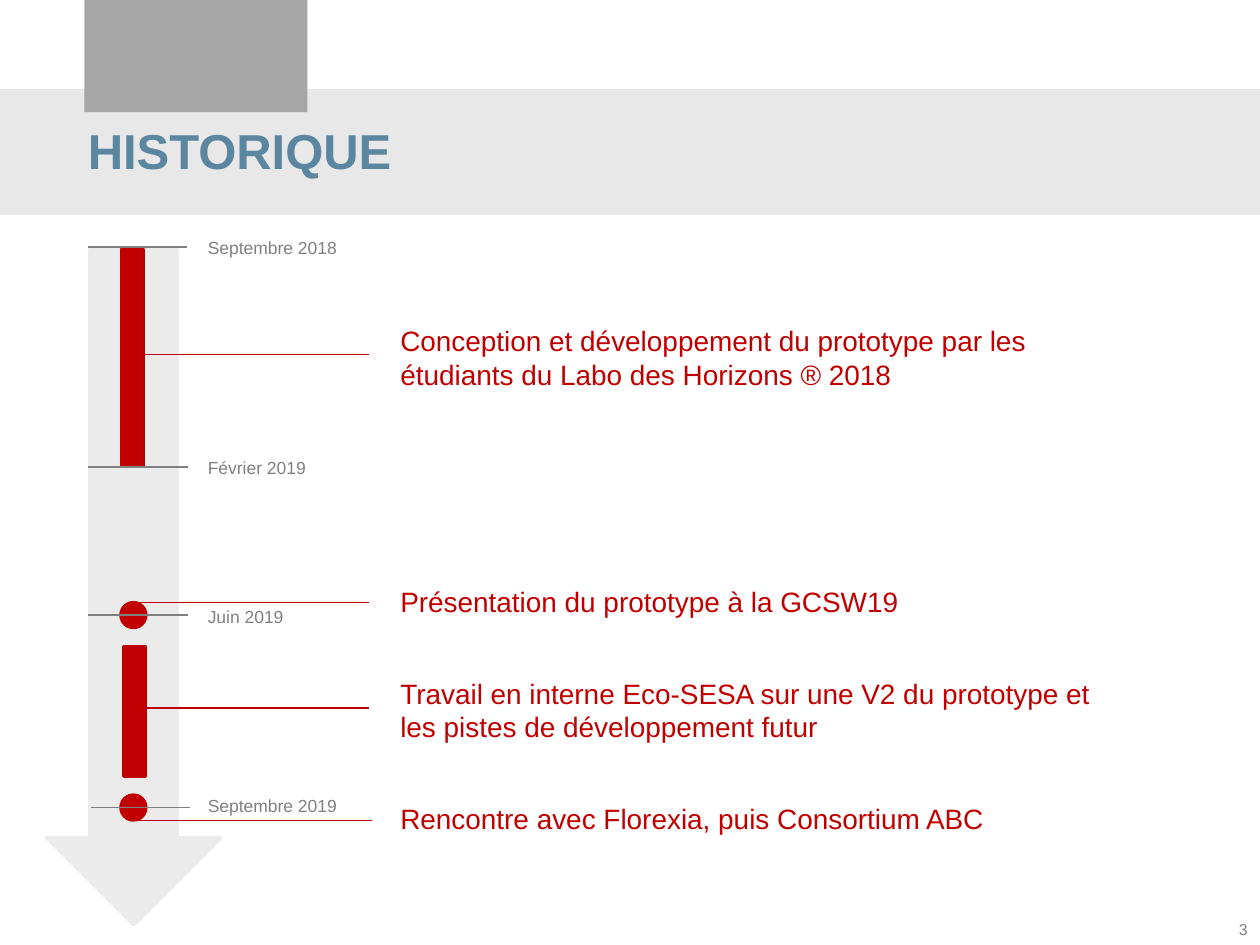
from lxml.etree import SubElement
from pptx import Presentation
from pptx.dml.color import RGBColor as Rgb
from pptx.enum.shapes import MSO_CONNECTOR as Conn, MSO_SHAPE as Form
from pptx.enum.text import MSO_ANCHOR as Anchor, PP_ALIGN as Align
from pptx.oxml.ns import qn
from pptx.util import Cm, Pt

THEME = {
    "font": "Arial",
    "band": "D9D9D9", "block": "A6A6A6", "arrow": "EBEBEB",
    "title": "5A869F", "date": "808080", "page": "7F7F7F", "event": "C00000",
    "title_pt": 28, "event_pt": 16, "date_pt": 10, "page_pt": 9,
}

# Lengths in cm. Dates: text, text top, tick left, tick right, tick height
DATES = [
    ("Septembre 2018", 4.65, 1.78, 3.76, 4.98),
    ("Février 2019", 9.09, 1.78, 3.78, 9.42),
    ("Juin 2019", 12.09, 1.78, 3.78, 12.4),
    ("Septembre 2019", 15.9, 1.83, 3.83, 16.28),
]
# Events: text, text top, text height, lead left, lead height
EVENTS = [
    ("Conception et développement du prototype par les étudiants "
     "du Labo des Horizons ® 2018", 6.4, 1.63, 2.69, 7.14),
    ("Présentation du prototype à la GCSW19", 11.66, 0.94, 2.69, 12.14),
    ("Travail en interne Eco-SESA sur une V2 du prototype et les pistes "
     "de développement futur", 13.51, 1.63, 2.69, 14.27),
    ("Rencontre avec Florexia, puis Consortium ABC", 16.03, 0.94, 2.74, 16.54),
]
BARS = [(2.67, 5.02, 4.37), (2.71, 13.03, 2.62)]  # middle, top, height
DOTS = [12.4, 16.28]  # middle heights
AXIS, DOT, BAR, LEAD = 2.69, 0.5, 0.43, 4.75


def shape(form, box, hue, line=None):
    item = slide.shapes.add_shape(form, *map(Cm, box))
    item.shadow.inherit = False
    item.fill.solid()
    item.fill.fore_color.rgb = Rgb.from_string(THEME[hue])
    if line:
        item.line.color.rgb = Rgb.from_string(THEME[hue])
        item.line.width = Pt(line)
    else:
        item.line.fill.background()
    return item


def rule(left, right, high, hue, width):
    item = slide.shapes.add_connector(
        Conn.STRAIGHT, Cm(left), Cm(high), Cm(right), Cm(high))
    item.line.color.rgb = Rgb.from_string(THEME[hue])
    item.line.width = Pt(width)
    SubElement(item._element.spPr, qn("a:effectLst"))


def label(text, box, kind, bold=False, align=Align.LEFT, anchor=Anchor.TOP):
    frame = slide.shapes.add_textbox(*map(Cm, box)).text_frame
    frame.word_wrap = True
    frame.vertical_anchor = anchor
    para = frame.paragraphs[0]
    para.alignment = align
    run = para.add_run()
    run.text = text
    font = run.font
    font.name, font.size, font.bold = THEME["font"], Pt(THEME[kind + "_pt"]), bold
    font.color.rgb = Rgb.from_string(THEME[kind])


deck = Presentation()
deck.slide_width, deck.slide_height = Cm(25.4), Cm(19.05)
slide = deck.slides.add_slide(deck.slide_layouts[6])

band = shape(Form.RECTANGLE, (-0.03, 1.8, 25.43, 2.54), "band")
tint = band._element.spPr.find(qn("a:solidFill"))[0]
SubElement(tint, qn("a:alpha"), val="59000")
shape(Form.RECTANGLE, (1.7, 0, 4.5, 2.26), "block")
label("3", (24.31, 18.42, 1.09, 0.64), "page", align=Align.RIGHT)
label("HISTORIQUE", (1.52, 2.29, 23.06, 1.47), "title", True,
      anchor=Anchor.MIDDLE)

shape(Form.DOWN_ARROW, (AXIS - 1.75, 5.03, 3.5, 13.61), "arrow", 2.25)
for mid in DOTS:
    shape(Form.OVAL, (AXIS - DOT / 2, mid - DOT / 2, DOT, DOT), "event", 2)
for mid, top, high in BARS:
    shape(Form.RECTANGLE, (mid - BAR / 2, top, BAR, high), "event", 2)

for text, top, left, right, tick in DATES:
    rule(left, right, tick, "date", 1)
    label(text, (3.94, top, 3.25, 0.69), "date")
for text, top, high, left, lead in EVENTS:
    label(text, (7.82, top, 14.88, high), "event")
    rule(left, left + LEAD, lead, "event", 0.75)

deck.save("out.pptx")
